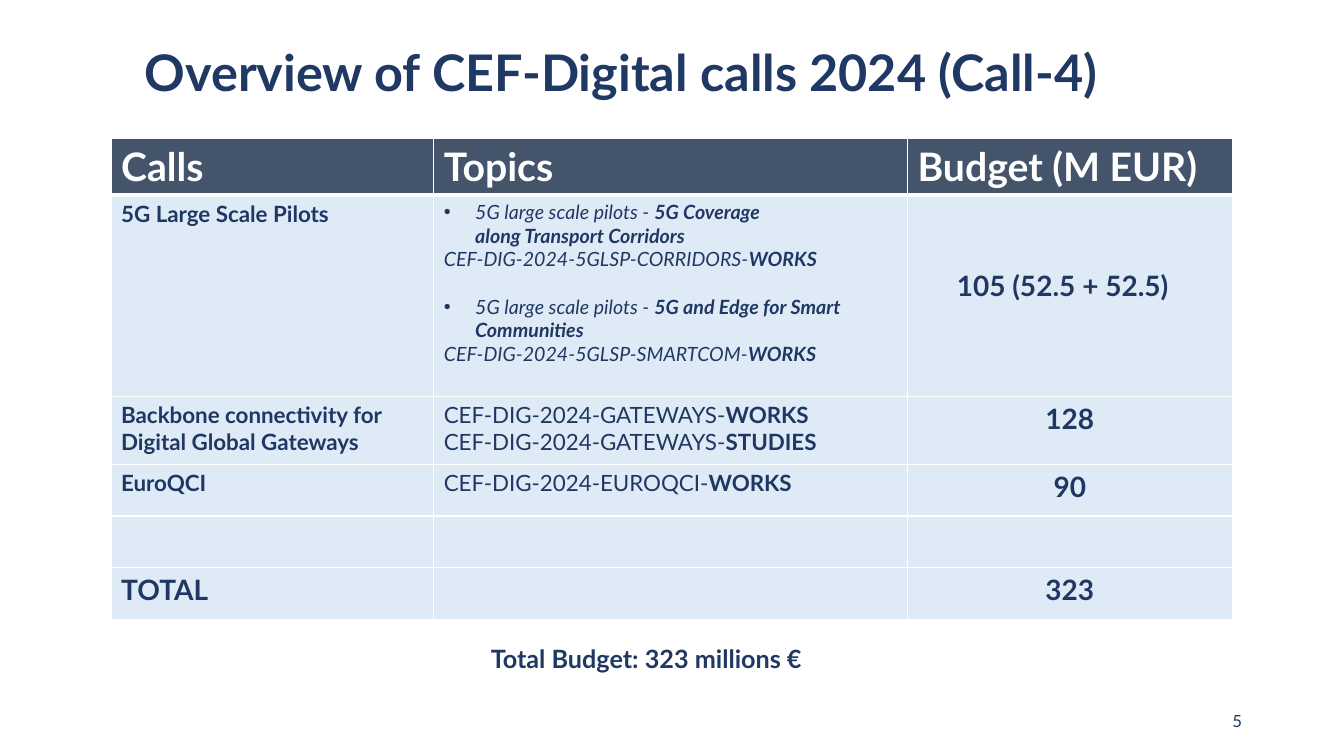
from lxml.etree import SubElement
from pptx import Presentation
from pptx.dml.color import RGBColor
from pptx.enum.text import MSO_ANCHOR, PP_ALIGN
from pptx.oxml.ns import qn
from pptx.util import Cm, Pt

FONT = "Lato"
NAVY, INK, SLATE, PALE, WHITE = "203864", "1F3762", "44546A", "DEEBF7", "FFFFFF"
HEADINGS = ["Calls", "Topics", "Budget (M EUR)"]
COLUMN_WIDTHS = [8.13, 11.94, 8.18]
ROW_HEIGHTS = [1.42, 5.08, 1.7, 1.3, 1.3, 1.3]
PILOT_TOPICS = [
    ("5G large scale pilots - |5G Coverage \nalong Transport Corridors",
     "CEF-DIG-2024-5GLSP-CORRIDORS-|WORKS"),
    ("5G large scale pilots - |5G and Edge for Smart Communities",
     "CEF-DIG-2024-5GLSP-SMARTCOM-|WORKS"),
]
CALLS = [
    ("5G Large Scale Pilots", [], "105 (52.5 + 52.5)"),
    ("Backbone connectivity for\nDigital Global Gateways",
     ["CEF-DIG-2024-GATEWAYS-|WORKS", "CEF-DIG-2024-GATEWAYS-|STUDIES"], "128"),
    ("EuroQCI", ["CEF-DIG-2024-EUROQCI-|WORKS"], "90"),
    ("", [], ""),
    ("TOTAL", [], "323"),
]


def color(value):
    return RGBColor.from_string(value)


def add_bullet(para):
    properties = para._p.get_or_add_pPr()
    properties.set("marL", str(Cm(0.79)))
    properties.set("indent", str(-Cm(0.79)))
    SubElement(properties, qn("a:buFont")).set("typeface", "Arial")
    SubElement(properties, qn("a:buChar")).set("char", "•")


def write(frame, text, size=18, ink=NAVY, bold=False, italic=False,
          align=PP_ALIGN.LEFT, bullet=False, before=0, spacing=None):
    """Add one paragraph; the part after a bar is bold, a newline breaks the line."""
    para = frame.paragraphs[0]
    if para.runs:
        para = frame.add_paragraph()
    if bullet:
        add_bullet(para)
    para.alignment = align
    if before:
        para.space_before = Pt(before)
    if spacing:
        para.line_spacing = spacing
    for part_index, part in enumerate(text.split("|")):
        for line_index, line in enumerate(part.split("\n")):
            if line_index:
                para.add_line_break()
            span = para.add_run()
            span.text = line
            span.font.name = FONT
            span.font.size = Pt(size)
            span.font.bold = bold or part_index == 1
            span.font.italic = italic
            span.font.color.rgb = color(ink)


def add_text(page, box, text, anchor=MSO_ANCHOR.TOP, **style):
    frame = page.shapes.add_textbox(*map(Cm, box)).text_frame
    frame.word_wrap = True
    frame.vertical_anchor = anchor
    write(frame, text, **style)


def style_cell(cell, fill, bottom=1):
    properties = cell._tc.get_or_add_tcPr()
    for side, width in zip("LRTB", (1, 1, 1, bottom)):
        line = SubElement(properties, qn(f"a:ln{side}"), w=str(Pt(width)))
        SubElement(SubElement(line, qn("a:solidFill")), qn("a:srgbClr"), val=WHITE)
    cell.fill.solid()
    cell.fill.fore_color.rgb = color(fill)


def write_pilot_topics(frame):
    for index, (topic, code) in enumerate(PILOT_TOPICS):
        write(frame, topic, size=14, ink=INK, italic=True, bullet=True,
              before=17 * index)
        write(frame, code, size=14, ink=INK, italic=True)


def add_calls_table(page, left, top):
    table = page.shapes.add_table(
        len(ROW_HEIGHTS), len(COLUMN_WIDTHS), Cm(left), Cm(top),
        Cm(sum(COLUMN_WIDTHS)), Cm(sum(ROW_HEIGHTS))).table
    table.horz_banding = False
    for column, width in zip(table.columns, COLUMN_WIDTHS):
        column.width = Cm(width)
    for row, height in zip(table.rows, ROW_HEIGHTS):
        row.height = Cm(height)

    for column, heading in enumerate(HEADINGS):
        cell = table.cell(0, column)
        style_cell(cell, SLATE, bottom=3)
        write(cell.text_frame, heading, size=28, ink=WHITE, bold=True)

    for row, (call, topics, budget) in enumerate(CALLS, start=1):
        call_cell, topic_cell, budget_cell = table.rows[row].cells
        for cell in (call_cell, topic_cell, budget_cell):
            style_cell(cell, PALE)
        if call:
            write(call_cell.text_frame, call, size=20 if call == "TOTAL" else 16,
                  ink=INK, bold=True)
        for topic in topics:
            write(topic_cell.text_frame, topic, size=16, ink=INK)
        if budget:
            write(budget_cell.text_frame, budget, size=20, ink=INK, bold=True,
                  align=PP_ALIGN.CENTER)

    write_pilot_topics(table.cell(1, 1).text_frame)
    pilot_budget = table.cell(1, 2)
    pilot_budget.margin_top = Cm(1.84)
    pilot_budget.margin_right = Cm(0.61)


def build_overview(page):
    add_text(page, (3.4, 0.81, 27.08, 2.18),
             "Overview of CEF-Digital calls 2024 (Call-4)",
             anchor=MSO_ANCHOR.MIDDLE, size=36, bold=True, spacing=0.9)
    add_calls_table(page, 2.8, 3.48)
    add_text(page, (23.93, 17.65, 7.62, 1.02), "5", anchor=MSO_ANCHOR.MIDDLE,
             size=12, align=PP_ALIGN.RIGHT)
    add_text(page, (12.12, 16.08, 8.79, 1.02), "Total Budget: 323 millions €",
             bold=True)


def main():
    deck = Presentation()
    deck.slide_width, deck.slide_height = Cm(33.87), Cm(19.05)
    build_overview(deck.slides.add_slide(deck.slide_layouts[6]))
    deck.save("out.pptx")


if __name__ == "__main__":
    main()
